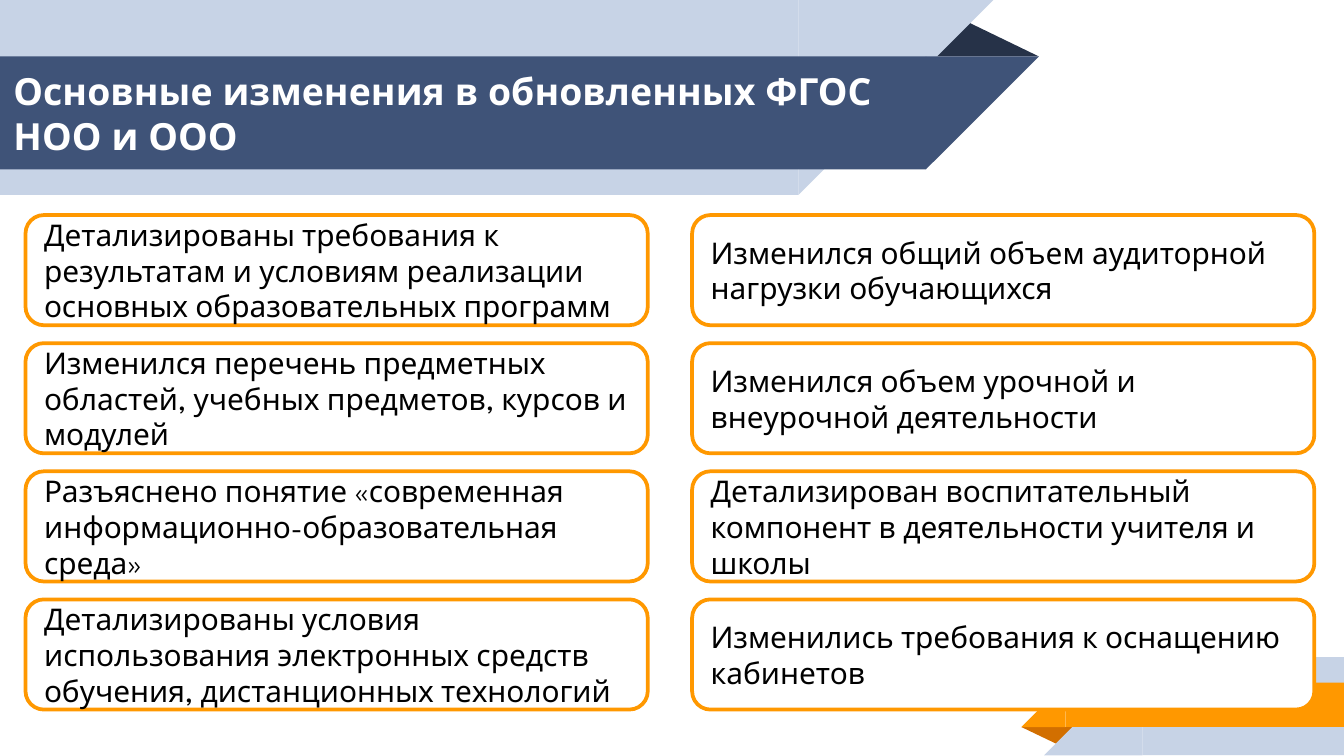
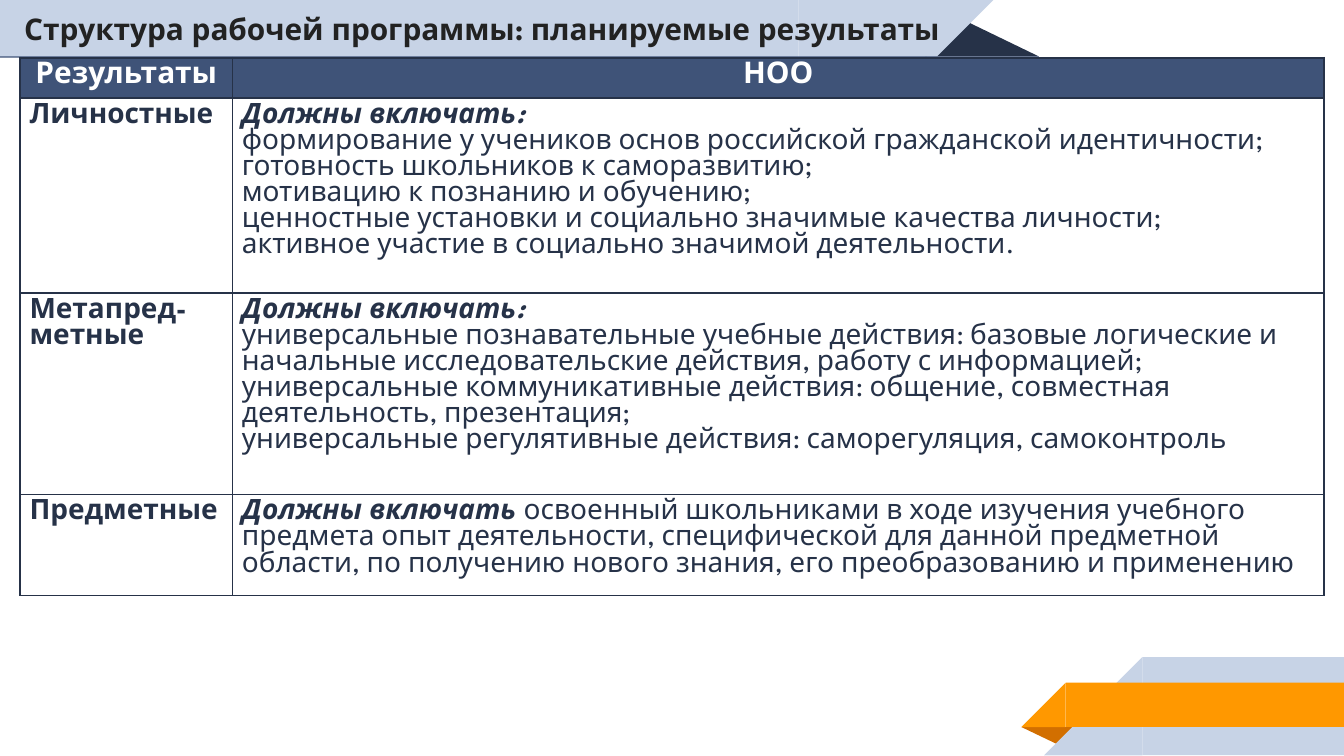
from lxml import etree
from pptx import Presentation
from pptx.dml.color import RGBColor
from pptx.enum.shapes import MSO_SHAPE
from pptx.enum.text import MSO_ANCHOR, MSO_AUTO_SIZE, PP_ALIGN
from pptx.oxml.ns import qn
from pptx.util import Inches, Pt

RECTANGLE = MSO_SHAPE.RECTANGLE
RIGHT_TRIANGLE = MSO_SHAPE.RIGHT_TRIANGLE
TRIANGLE = MSO_SHAPE.ISOSCELES_TRIANGLE
ROUNDED = MSO_SHAPE.ROUNDED_RECTANGLE
TOP, MIDDLE = MSO_ANCHOR.TOP, MSO_ANCHOR.MIDDLE
LEFT, CENTER = PP_ALIGN.LEFT, PP_ALIGN.CENTER

FONT = "League Spartan"
WHITE = RGBColor(0xFF, 0xFF, 0xFF)
BLACK = RGBColor(0x00, 0x00, 0x00)
INK = RGBColor(0x22, 0x22, 0x22)
NAVY = RGBColor(0x26, 0x32, 0x48)
BLUE = RGBColor(0x3F, 0x53, 0x78)
PALE = RGBColor(0xC7, 0xD3, 0xE6)
ORANGE = RGBColor(0xFF, 0x98, 0x00)
RUST = RGBColor(0xD2, 0x6F, 0x00)

# Bands of every slide: shape, place, colour, rotation, flipped
BANDS = [
    (TRIANGLE, (6.88, 0.14, 0.85, 0.28), NAVY, 0, False),
    (RECTANGLE, (0, 0, 5.94, 1.45), PALE, 180, True),
    (RIGHT_TRIANGLE, (5.94, 0, 1.45, 1.45), PALE, 180, True),
    (RECTANGLE, (0, 0.42, 6.89, 0.84), BLUE, 180, True),
    (RIGHT_TRIANGLE, (6.89, 0.42, 0.84, 0.84), BLUE, 180, True),
    (TRIANGLE, (7.6, 5.41, 0.43, 0.14), RUST, 180, False),
    (RECTANGLE, (8.5, 4.89, 1.5, 0.73), PALE, 0, True),
    (RIGHT_TRIANGLE, (7.77, 4.89, 0.73, 0.73), PALE, 0, True),
    (RECTANGLE, (7.93, 5.08, 2.08, 0.33), ORANGE, 0, True),
    (RIGHT_TRIANGLE, (7.6, 5.08, 0.33, 0.33), ORANGE, 0, True),
]

CHANGES = [
    [
        "Детализированы требования к результатам и условиям реализации основных образовательных программ",
        "Изменился перечень предметных областей, учебных предметов, курсов и модулей",
        "Разъяснено понятие «современная информационно-образовательная среда»",
        "Детализированы условия использования электронных средств обучения, дистанционных технологий",
    ],
    [
        "Изменился общий объем аудиторной нагрузки обучающихся",
        "Изменился объем урочной и внеурочной деятельности",
        "Детализирован воспитательный компонент в деятельности учителя и школы",
        "Изменились требования к оснащению кабинетов",
    ],
]

# Each result: name, bold lead, rest of the lead's line, further lines
RESULTS = [
    ("Личностные", "Должны включать:", "", [
        "формирование у учеников основ российской гражданской идентичности;",
        "готовность школьников к саморазвитию;",
        "мотивацию к познанию и обучению;",
        "ценностные установки и социально значимые качества личности;",
        "активное участие в социально значимой деятельности.",
    ]),
    ("Метапред-метные", "Должны включать:", "", [
        "универсальные познавательные учебные действия: базовые логические и начальные "
        "исследовательские действия, работу с информацией;",
        "универсальные коммуникативные действия: общение, совместная деятельность, презентация;",
        "универсальные регулятивные действия: саморегуляция, самоконтроль",
    ]),
    ("Предметные", "Должны включать ",
     "освоенный школьниками в ходе изучения учебного предмета опыт деятельности, "
     "специфической для данной предметной области, по получению нового знания, "
     "его преобразованию и применению", []),
]


def add_block(slide, kind, place, fill):
    shape = slide.shapes.add_shape(kind, *[Inches(length) for length in place])
    shape.shadow.inherit = False
    shape.fill.solid()
    shape.fill.fore_color.rgb = fill
    shape.line.fill.background()
    return shape


def write(paragraph, text, size, color, spacing=None, **formats):
    run = paragraph.add_run()
    run.text = text
    run.font.color.rgb = color
    values = {"name": FONT, "size": Pt(size), "bold": False, "italic": False, **formats}
    for name, value in values.items():
        setattr(run.font, name, value)
    if spacing:
        paragraph.line_spacing = Pt(spacing)


# 16:9 page
presentation = Presentation()
presentation.slide_width = Inches(10)
presentation.slide_height = Inches(10) * 9 // 16
title_only = presentation.slide_layouts[5]

# Both slides: bands and title
TITLES = [
    ("Основные изменения в обновленных ФГОС НОО и ООО",
     (0, 0.46, 7.03, 0.77), 20, 24, WHITE, TOP, 0.05),
    ("Структура рабочей программы: планируемые результаты",
     (0.08, 0.06, 7.12, 0.3), 16, None, INK, MIDDLE, 0.1),
]
slides = []
for text, place, size, spacing, color, anchor, margin in TITLES:
    slide = presentation.slides.add_slide(title_only)
    slides.append(slide)
    for kind, band_place, fill, rotation, flipped in BANDS:
        band = add_block(slide, kind, band_place, fill)
        band.rotation = rotation
        if kind == TRIANGLE:
            band.adjustments[0] = 0.32
        if flipped:
            band._element.spPr.find(qn("a:xfrm")).set("flipH", "1")

    title = slide.shapes.title
    title.left, title.top, title.width, title.height = [Inches(length) for length in place]
    frame = title.text_frame
    settings = {
        "word_wrap": True, "auto_size": MSO_AUTO_SIZE.NONE, "vertical_anchor": anchor,
        "margin_left": Inches(0.1), "margin_right": Inches(0.1),
        "margin_top": Inches(margin), "margin_bottom": Inches(margin),
    }
    for name, value in settings.items():
        setattr(frame, name, value)
    frame.paragraphs[0].alignment = LEFT
    write(frame.paragraphs[0], text, size, color, spacing, bold=True)
    slide.shapes._spTree.append(title._element)  # bring in front of the bands

changes_slide, results_slide = slides

# Slide 1: two columns of changes
ROW_STEP = (4.46 - 1.6) / 3
for column, texts in enumerate(CHANGES):
    for row, text in enumerate(texts):
        place = (0.19 + 4.96 * column, 1.6 + ROW_STEP * row, 4.63, 0.82)
        box = add_block(changes_slide, ROUNDED, place, WHITE)
        box.line.color.rgb = ORANGE
        box.line.width = Pt(2)
        box.text_frame.word_wrap = True
        box.text_frame.vertical_anchor = MIDDLE
        paragraph = box.text_frame.paragraphs[0]
        paragraph.alignment = LEFT
        write(paragraph, text, 16, BLACK, 19.2)

# Slide 2: white cover over the lower bands, then the table
add_block(results_slide, RECTANGLE, (0, 0.43, 8.96, 1.77), WHITE)
results_slide.shapes._spTree.append(results_slide.shapes.title._element)

COLUMN_WIDTHS = [1.58, 8.12]
ROW_HEIGHTS = [0.3, 1.45, 1.5, 0.75]
table = results_slide.shapes.add_table(
    len(ROW_HEIGHTS), len(COLUMN_WIDTHS), Inches(0.15), Inches(0.43),
    Inches(sum(COLUMN_WIDTHS)), Inches(sum(ROW_HEIGHTS))).table
table.first_row = False
table.horz_banding = False
for column, width in zip(table.columns, COLUMN_WIDTHS):
    column.width = Inches(width)
for row, height in zip(table.rows, ROW_HEIGHTS):
    row.height = Inches(height)

# Table text
for column, heading in enumerate(["Результаты", "НОО"]):
    paragraph = table.cell(0, column).text_frame.paragraphs[0]
    paragraph.alignment = CENTER
    write(paragraph, heading, 16, WHITE, bold=True)
for row, (name, lead, rest, lines) in enumerate(RESULTS, start=1):
    write(table.cell(row, 0).text_frame.paragraphs[0], name, 15, NAVY, 14, bold=True)
    frame = table.cell(row, 1).text_frame
    write(frame.paragraphs[0], lead, 15, NAVY, 14, bold=True, italic=True)
    if rest:
        write(frame.paragraphs[0], rest, 15, NAVY, 14)
    for line in lines:
        write(frame.add_paragraph(), line, 15, NAVY, 14)

# Cell margins, borders and fills
for index, cell in enumerate(table.iter_cells()):
    cell.margin_left = cell.margin_right = Inches(0.07)
    cell.margin_top = cell.margin_bottom = Inches(0.04)
    properties = cell._tc.get_or_add_tcPr()
    for side in ("a:lnL", "a:lnR", "a:lnT", "a:lnB"):
        border = etree.SubElement(properties, qn(side), w=str(Pt(1)))
        solid = etree.SubElement(border, qn("a:solidFill"))
        etree.SubElement(solid, qn("a:srgbClr"), val=str(NAVY))
    if index < len(COLUMN_WIDTHS):
        cell.fill.solid()
        cell.fill.fore_color.rgb = BLUE
    else:
        cell.fill.background()

presentation.save("out.pptx")
